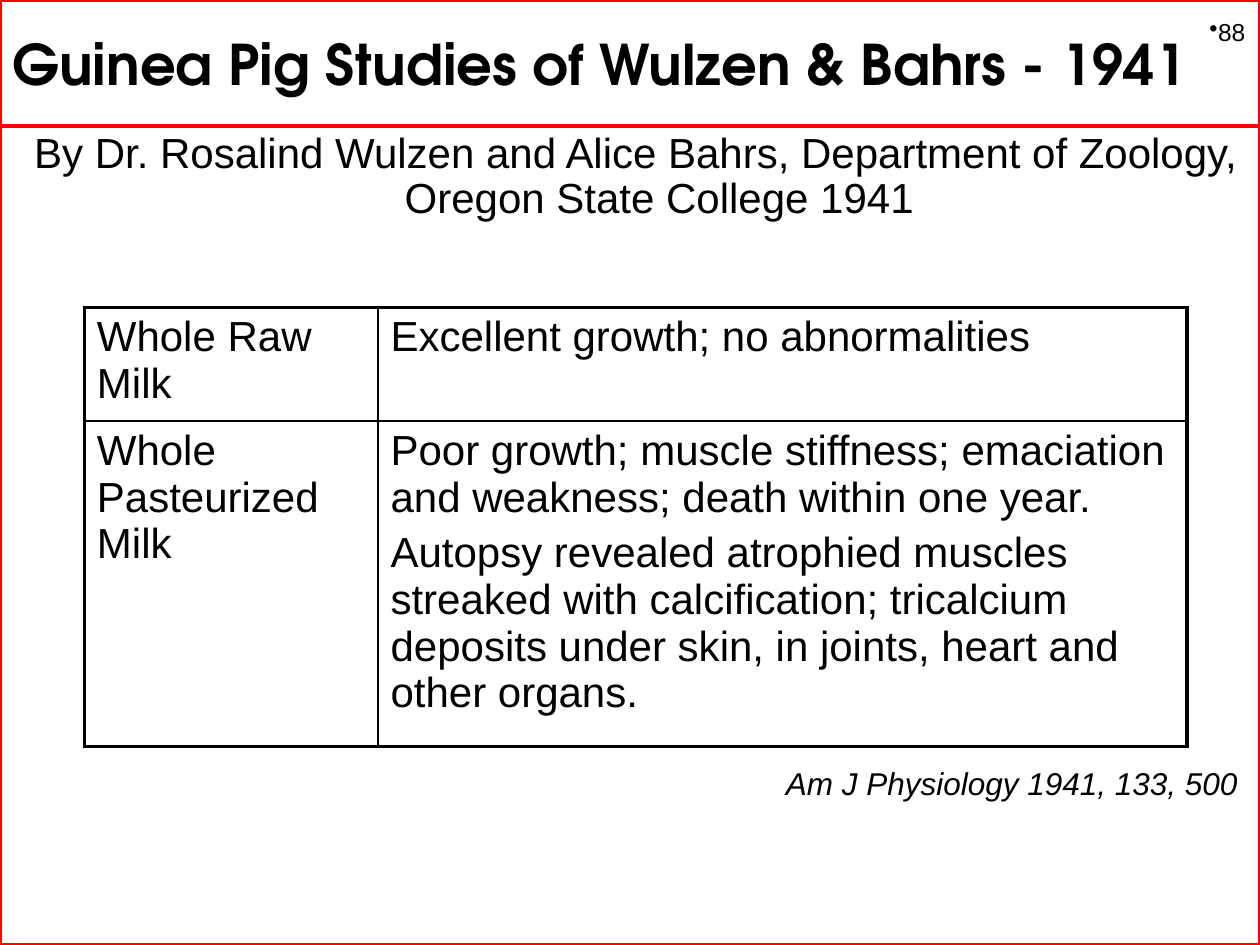
from lxml.etree import SubElement
from pptx import Presentation
from pptx.dml.color import RGBColor
from pptx.enum.shapes import MSO_SHAPE
from pptx.enum.text import MSO_ANCHOR, PP_ALIGN
from pptx.oxml.ns import qn
from pptx.util import Cm, Pt

HUES = {"ink": "000000", "frame": "FF0000", "page": "FFFFFF"}
SANS, HEAD = "Arial", "TeX Gyre Adventor"
WIDE, HIGH, BAND = 25.4, 19.05, 2.54

TITLE = "Guinea Pig Studies of Wulzen & Bahrs - 1941"
AUTHORS = ("By Dr. Rosalind Wulzen and Alice Bahrs, Department of "
           "Zoology, Oregon State College 1941")
SOURCE = "Am J Physiology 1941, 133, 500"
NUMBER = "88"
ROWS = [
    ("Whole Raw Milk", "Excellent growth; no abnormalities"),
    ("Whole Pasteurized Milk",
     "Poor growth; muscle stiffness; emaciation and weakness; "
     "death within one year.\n"
     "Autopsy revealed atrophied muscles streaked with calcification; "
     "tricalcium deposits under skin, in joints, heart and other organs."),
]
COLS = [5.92, 16.31]
TALL = [2.28, 6.56]
THICK, THIN = 2.25, 1


def tint(name):
    return RGBColor.from_string(HUES[name])


def write(frame, text, size, face=SANS, bold=False, slant=False,
          align=PP_ALIGN.LEFT, gap=0):
    frame.text = text
    frame.word_wrap = True
    for i, para in enumerate(frame.paragraphs):
        para.alignment = align
        if i:
            para.space_before = Pt(gap)
        for run in para.runs:
            font = run.font
            font.name, font.size = face, Pt(size)
            font.bold, font.italic = bold, slant
            font.color.rgb = tint("ink")
    return frame.paragraphs[0]


def frame_box(slide, height):
    box = slide.shapes.add_shape(MSO_SHAPE.RECTANGLE, 0, 0, Cm(WIDE), Cm(height))
    box.shadow.inherit = False
    box.fill.background()
    box.line.color.rgb = tint("frame")
    box.line.width = Pt(THICK)
    return box


def text_box(slide, left, top, width, height):
    box = slide.shapes.add_textbox(Cm(left), Cm(top), Cm(width), Cm(height))
    return box.text_frame


def hang(para):
    para.line_spacing = 0.9
    props = para._p.get_or_add_pPr()
    props.set("marL", str(Cm(0.95)))
    props.set("indent", str(Cm(-0.95)))


def edge(cell, side, width):
    line = SubElement(cell._tc.get_or_add_tcPr(), qn("a:ln" + side),
                      w=str(Pt(width)))
    fill = SubElement(line, qn("a:solidFill"))
    SubElement(fill, qn("a:srgbClr"), val=HUES["ink"])


def add_grid(slide):
    table = slide.shapes.add_table(
        len(ROWS), len(COLS), Cm(1.7), Cm(6.2),
        Cm(sum(COLS)), Cm(sum(TALL))).table
    table.first_row = table.horz_banding = False
    for col, width in zip(table.columns, COLS):
        col.width = Cm(width)
    for r, texts in enumerate(ROWS):
        table.rows[r].height = Cm(TALL[r])
        for c, text in enumerate(texts):
            cell = table.cell(r, c)
            write(cell.text_frame, text, 24, gap=4.8)
            outer = {"L": c == 0, "R": c == len(COLS) - 1,
                     "T": r == 0, "B": r == len(ROWS) - 1}
            for side, out in outer.items():
                edge(cell, side, THICK if out else THIN)
            cell.fill.background()


def main():
    deck = Presentation()
    deck.slide_width, deck.slide_height = Cm(WIDE), Cm(HIGH)
    slide = deck.slides.add_slide(deck.slide_layouts[6])
    slide.background.fill.solid()
    slide.background.fill.fore_color.rgb = tint("page")

    frame_box(slide, HIGH)
    head = frame_box(slide, BAND).text_frame
    head.vertical_anchor = MSO_ANCHOR.MIDDLE
    write(head, TITLE, 32, HEAD, bold=True)

    page = text_box(slide, 24.13, 0, 1.27, 1.27)
    page.vertical_anchor = MSO_ANCHOR.MIDDLE
    para = write(page, NUMBER, 14)
    SubElement(para._p.get_or_add_pPr(), qn("a:buChar"), char="•")

    hang(write(text_box(slide, 0.43, BAND, 24.77, 2.2), AUTHORS, 24,
               align=PP_ALIGN.CENTER))
    add_grid(slide)
    hang(write(text_box(slide, 0.43, 15.37, 24.77, 1), SOURCE, 18,
               slant=True, align=PP_ALIGN.RIGHT))
    deck.save("out.pptx")


if __name__ == "__main__":
    main()
